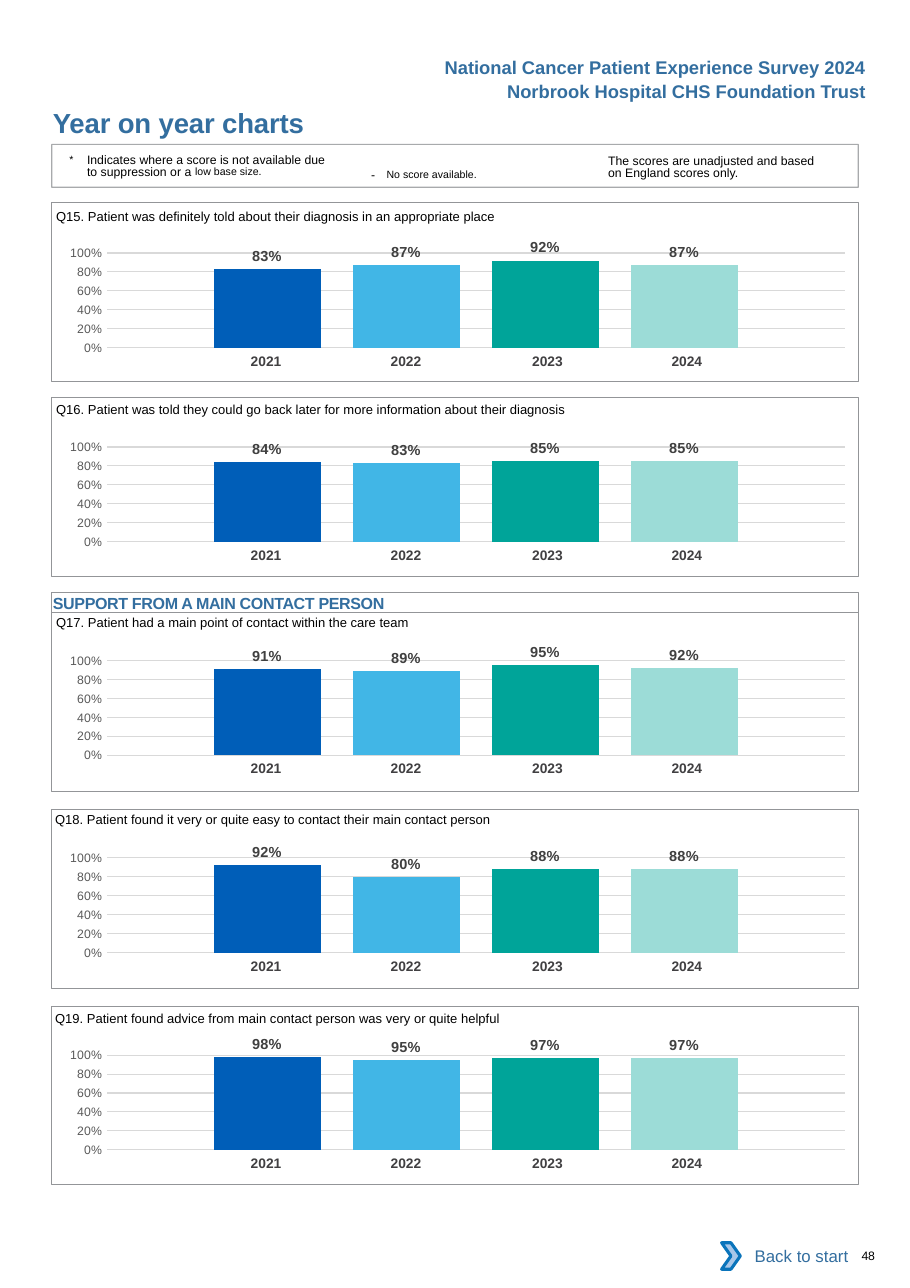
from lxml import etree
from pptx import Presentation
from pptx.chart.data import CategoryChartData
from pptx.dml.color import RGBColor
from pptx.enum.chart import XL_CHART_TYPE, XL_LABEL_POSITION, XL_TICK_MARK
from pptx.enum.shapes import MSO_SHAPE
from pptx.enum.text import MSO_ANCHOR, PP_ALIGN
from pptx.oxml.ns import qn
from pptx.util import Pt

PX = 9144  # 100 px to the inch
RECT, CHEVRON = MSO_SHAPE.RECTANGLE, MSO_SHAPE.CHEVRON
LEFT, CENTER, RIGHT = PP_ALIGN.LEFT, PP_ALIGN.CENTER, PP_ALIGN.RIGHT
TOP, MIDDLE = MSO_ANCHOR.TOP, MSO_ANCHOR.MIDDLE
COLUMNS, OUTSIDE_END = XL_CHART_TYPE.COLUMN_CLUSTERED, XL_LABEL_POSITION.OUTSIDE_END
NO_TICK = XL_TICK_MARK.NONE

BLUE, GREY, BLACK = "336E9F", "939598", "000000"
YEARS = {"2021": "005EB8", "2022": "41B6E6", "2023": "00A499", "2024": "9CDCD7"}
YEAR_WIDTHS = [127, 127, 134, 127]
YEAR_RIGHT_MARGINS = [0, 0, 4, 12]
PLOT_AREA = {"x": 0.079, "y": 0.145, "w": 0.915, "h": 0.666}

# frame top, question left and top, chart top, question, score per year
PANELS = [
    (184, 51, 180, 211, "Q15. Patient was definitely told about their diagnosis in an appropriate place",
     [0.83, 0.87, 0.92, 0.87]),
    (361, 51, 355, 387, "Q16. Patient was told they could go back later for more information about their diagnosis",
     [0.84, 0.83, 0.85, 0.85]),
    (556, 51, 549, 581, "Q17. Patient had a main point of contact within the care team",
     [0.91, 0.89, 0.95, 0.92]),
    (735, 50, 728, 760, "Q18. Patient found it very or quite easy to contact their main contact person",
     [0.92, 0.80, 0.88, 0.88]),
    (913, 50, 908, 939, "Q19. Patient found advice from main contact person was very or quite helpful",
     [0.98, 0.95, 0.97, 0.97]),
]


def rgb(value):
    return RGBColor.from_string(value)


def write(holder, runs, margins=(0, 0, 0, 0), align=LEFT, anchor=TOP, pitch=None):
    """Fill a shape or cell with one paragraph of (text, size, colour, bold, rPr attributes) runs."""
    frame = holder.text_frame
    frame.word_wrap = True
    sides = ("margin_left", "margin_top", "margin_right", "margin_bottom")
    for side, margin in zip(sides, margins):
        setattr(holder if hasattr(holder, "merge") else frame, side, margin * PX)
    if not hasattr(holder, "merge"):
        frame.vertical_anchor = anchor
    paragraph = frame.paragraphs[0]
    paragraph.alignment = align
    if pitch:
        paragraph.line_spacing = Pt(pitch)
    for text, size, colour, bold, extras in runs:
        run = paragraph.add_run()
        run.text = text
        for name, value in {"name": "Arial", "size": Pt(size), "bold": bold}.items():
            setattr(run.font, name, value)
        run.font.color.rgb = rgb(colour)
        for name, value in extras.items():
            run.font._element.set(name, value)
    return paragraph


prs = Presentation()
prs.slide_width, prs.slide_height = 826 * PX, 1169 * PX
slide = prs.slides.add_slide(prs.slide_layouts[6])
shapes = slide.shapes

# Frames and the back button: preset, box, fill, line colour, line width
outlines = [(RECT, (47, frame_top, 732, 162), None, GREY, 0.5) for frame_top, *_ in PANELS]
outlines += [
    (RECT, (47, 538, 732, 18), None, GREY, 0.5),
    (RECT, (47, 131, 732, 39), None, GREY, 0.75),
    (RECT, (662, 1119, 118, 42), "FFFFFF", None, 0),
    (CHEVRON, (655, 1128, 17, 24), "A8C7E9", "0A74BB", 2),
]

for frame_top, question_left, question_top, chart_top, question, scores in PANELS:
    year_table = shapes.add_table(1, 4, 173 * PX, (chart_top + 105) * PX, 515 * PX, 27 * PX).table
    year_table.first_row = year_table.horz_banding = False
    for column, (year, width, margin) in enumerate(zip(YEARS, YEAR_WIDTHS, YEAR_RIGHT_MARGINS)):
        year_table.columns[column].width = width * PX
        cell = year_table.cell(0, column)
        cell.fill.background()
        write(cell, [(year, 9, "414042", True, {})], (10, 5, margin, 5), CENTER)

    data = CategoryChartData(number_format="0%")
    data.categories = ["1"]
    for number, score in enumerate(scores, 1):
        data.add_series(f"Series {number}", [score])
    chart = shapes.add_chart(COLUMNS, 39 * PX, chart_top * PX, 732 * PX, 129 * PX, data).chart
    chart.has_legend = chart.has_title = False
    chart.font.name, chart.font.size = "Calibri", Pt(10)
    chart.font.color.rgb = rgb(BLACK)
    chart.category_axis.visible = False

    percent_axis = chart.value_axis
    axis_format = {"minimum_scale": 0, "maximum_scale": 1, "major_unit": 0.2,
                   "major_tick_mark": NO_TICK, "minor_tick_mark": NO_TICK}
    for name, value in axis_format.items():
        setattr(percent_axis, name, value)
    percent_axis.format.line.fill.background()
    percent_axis.major_gridlines.format.line.color.rgb = rgb("D9D9D9")
    percent_axis.major_gridlines.format.line.width = Pt(0.75)
    percent_axis.tick_labels.font.name = "Arial"
    percent_axis.tick_labels.font.size = Pt(8)
    percent_axis.tick_labels.font.color.rgb = rgb("595959")
    percent_axis.tick_labels.number_format = "0%"
    percent_axis.tick_labels.number_format_is_linked = False

    plot = chart.plots[0]
    plot.gap_width, plot.overlap, plot.vary_by_categories = 200, -30, False
    for series, colour in zip(plot.series, YEARS.values()):
        series.format.fill.solid()
        series.format.fill.fore_color.rgb = rgb(colour)
        labels = series.data_labels
        label_format = {"show_value": True, "position": OUTSIDE_END,
                        "number_format": "0%", "number_format_is_linked": False}
        for name, value in label_format.items():
            setattr(labels, name, value)
        labels.font.name, labels.font.size, labels.font.bold = "Arial", Pt(9.5), True
        labels.font.color.rgb = rgb("404040")

    plot_area = chart._chartSpace.chart.plotArea
    for old_layout in plot_area.findall(qn("c:layout")):
        plot_area.remove(old_layout)
    layout = etree.Element(qn("c:layout"))
    plot_area.insert(0, layout)
    manual = etree.SubElement(layout, qn("c:manualLayout"))
    settings = {"layoutTarget": "inner", "xMode": "edge", "yMode": "edge", **PLOT_AREA}
    for name, value in settings.items():
        etree.SubElement(manual, qn(f"c:{name}"), val=str(value))

drawn = []
for preset, box, fill, line, width in outlines:
    outline = shapes.add_shape(preset, *(length * PX for length in box))
    outline.shadow.inherit = False
    if fill:
        outline.fill.solid()
        outline.fill.fore_color.rgb = rgb(fill)
    else:
        outline.fill.background()
    if line:
        outline.line.color.rgb = rgb(line)
        outline.line.width = Pt(width)
    else:
        outline.line.fill.background()
    drawn.append(outline)

section_heading, notes_frame, back_button, _ = drawn[len(PANELS):]
notes_colour = next(notes_frame._element.spPr.iter(qn("a:srgbClr")))
etree.SubElement(notes_colour, qn("a:alpha"), val="80000")
write(section_heading, [("SUPPORT FROM A MAIN CONTACT PERSON", 10.5, BLUE, True, {"spc": "-20"})],
      (1, 1, 0, 0))
write(back_button, [("Back to start", 11, BLUE, False, {})], (10, 5, 10, 5), RIGHT, MIDDLE)

# box, runs, margins, alignment, line pitch
INSET = (10, 5, 10, 5)
texts = [
    ((350, 46, 446, 30), [("National Cancer Patient Experience Survey 2024", 12, BLUE, True, {})],
     INSET, RIGHT, None),
    ((350, 68, 446, 30), [("Norbrook Hospital CHS Foundation Trust", 12, BLUE, True, {})],
     INSET, RIGHT, None),
    ((48, 96, 450, 30), [("Year on year charts", 18, BLUE, True, {"spc": "-10"})],
     (0, 0, 0, 0), LEFT, None),
    ((552, 138, 201, 27),
     [("The scores are unadjusted and based on England scores only.", 8, BLACK, False, {})],
     (0, 3, 0, 0), LEFT, 8.1),
    ((327, 141, 183, 24), [("- ", 8, BLACK, False, {"spc": "260"}),
                           ("No score available.", 12, BLACK, False, {"baseline": "3000"})],
     INSET, LEFT, None),
    ((782, 1133, 41, 13), [("48", 8, BLACK, False, {"spc": "-20"})], (0, 0, 0, 0), LEFT, None),
]
for _, question_left, question_top, _, question, _ in PANELS:
    texts.append(((question_left, question_top, 560, 24), [(question, 8.5, BLACK, False, {})],
                  (0, 9, 0, 0), LEFT, None))
for box, runs, margins, align, pitch in texts:
    write(shapes.add_textbox(*(length * PX for length in box)), runs, margins, align, pitch=pitch)

suppression_note = shapes.add_textbox(63 * PX, 138 * PX, 238 * PX, 27 * PX)
paragraph = write(suppression_note, [
    ("*\t", 12, BLACK, False, {"baseline": "3000"}),
    ("Indicates where a score is not available due to suppression or a ", 8, BLACK, False, {}),
    ("low base size.", 12, BLACK, False, {"baseline": "7000"}),
], (0, 3, 0, 0), pitch=8.1)
for name, value in {"marL": 16 * PX, "indent": -16 * PX}.items():
    paragraph._p.get_or_add_pPr().set(name, str(value))

prs.save("out.pptx")
